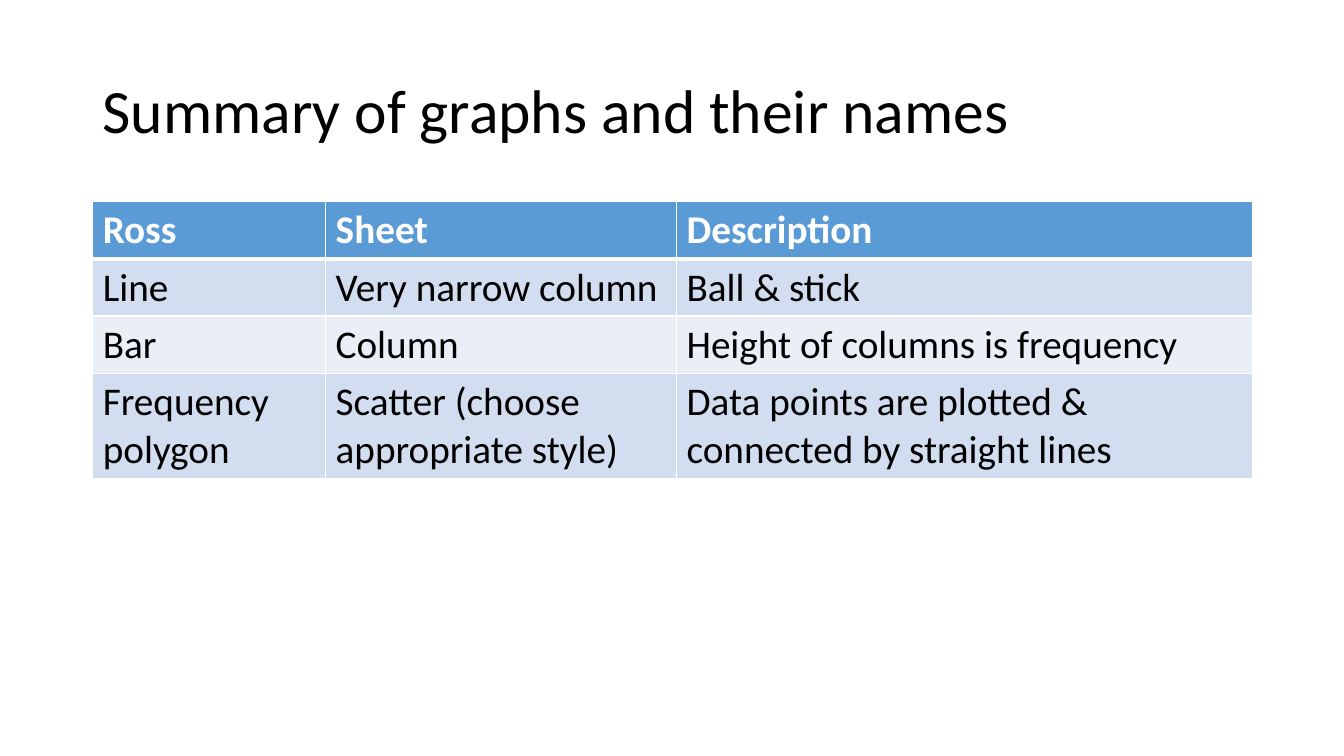
from dataclasses import dataclass

from lxml import etree
from pptx import Presentation
from pptx.dml.color import RGBColor
from pptx.enum.text import MSO_ANCHOR
from pptx.oxml.ns import qn
from pptx.util import Pt

MIDDLE = MSO_ANCHOR.MIDDLE
PX = 9144  # EMU per px, 100 px to the inch


@dataclass(frozen=True)
class Theme:
    font: str = "Calibri"
    title_size: int = 44
    table_size: int = 28
    ink: str = "000000"
    paper: str = "FFFFFF"
    header: str = "5B9BD5"
    bands: tuple = ("D2DEEF", "EAEFF7")
    rule: int = 1
    header_rule: int = 3


THEME = Theme()

GRAPH_NAMES = [
    ("Ross", "Sheet", "Description"),
    ("Line", "Very narrow column", "Ball & stick"),
    ("Bar", "Column", "Height of columns is frequency"),
    ("Frequency polygon", "Scatter (choose appropriate style)",
     "Data points are plotted &\nconnected by straight lines"),
]
COLUMN_WIDTHS = (231, 348, 571)
ROW_HEIGHTS = (56, 56, 56, 105)


def px(*lengths):
    return [length * PX for length in lengths]


def style_text(frame, size, color, bold=False):
    for paragraph in frame.paragraphs:
        for run in paragraph.runs:
            run.font.name = THEME.font
            run.font.size = Pt(size)
            run.font.bold = bold
            run.font.color.rgb = RGBColor.from_string(color)


def add_borders(cell, top, bottom):
    """Rule all four sides; borders must come before the cell's fill."""
    properties = cell._tc.get_or_add_tcPr()
    widths = {"a:lnL": THEME.rule, "a:lnR": THEME.rule,
              "a:lnT": top, "a:lnB": bottom}
    for side, width in widths.items():
        line = etree.SubElement(properties, qn(side), w=str(Pt(width)))
        fill = etree.SubElement(line, qn("a:solidFill"))
        etree.SubElement(fill, qn("a:srgbClr"), val=THEME.paper)


def add_title(slide, box, wording):
    frame = slide.shapes.add_textbox(*px(*box)).text_frame
    frame.word_wrap = True
    frame.vertical_anchor = MIDDLE
    frame.text = wording
    frame.paragraphs[0].line_spacing = 0.9
    style_text(frame, THEME.title_size, THEME.ink)


def add_graph_table(slide, box):
    table = slide.shapes.add_table(
        len(GRAPH_NAMES), len(COLUMN_WIDTHS), *px(*box)).table
    for column, width in zip(table.columns, px(*COLUMN_WIDTHS)):
        column.width = width
    for row, height in zip(table.rows, px(*ROW_HEIGHTS)):
        row.height = height

    for row_index, names in enumerate(GRAPH_NAMES):
        is_header = row_index == 0
        band = THEME.header if is_header else THEME.bands[(row_index - 1) % 2]
        ink = THEME.paper if is_header else THEME.ink
        top = THEME.header_rule if row_index == 1 else THEME.rule
        bottom = THEME.header_rule if is_header else THEME.rule
        for column_index, name in enumerate(names):
            cell = table.cell(row_index, column_index)
            cell.text_frame.text = name
            style_text(cell.text_frame, THEME.table_size, ink, is_header)
            add_borders(cell, top, bottom)
            cell.fill.solid()
            cell.fill.fore_color.rgb = RGBColor.from_string(band)


def main():
    deck = Presentation()
    deck.slide_width, deck.slide_height = px(1333, 750)
    slide = deck.slides.add_slide(deck.slide_layouts[6])

    # Heading
    add_title(slide, (92, 40, 1150, 145), "Summary of graphs and their names")
    # Names of each graph
    add_graph_table(slide, (92, 200, sum(COLUMN_WIDTHS), sum(ROW_HEIGHTS)))

    deck.save("out.pptx")


if __name__ == "__main__":
    main()
